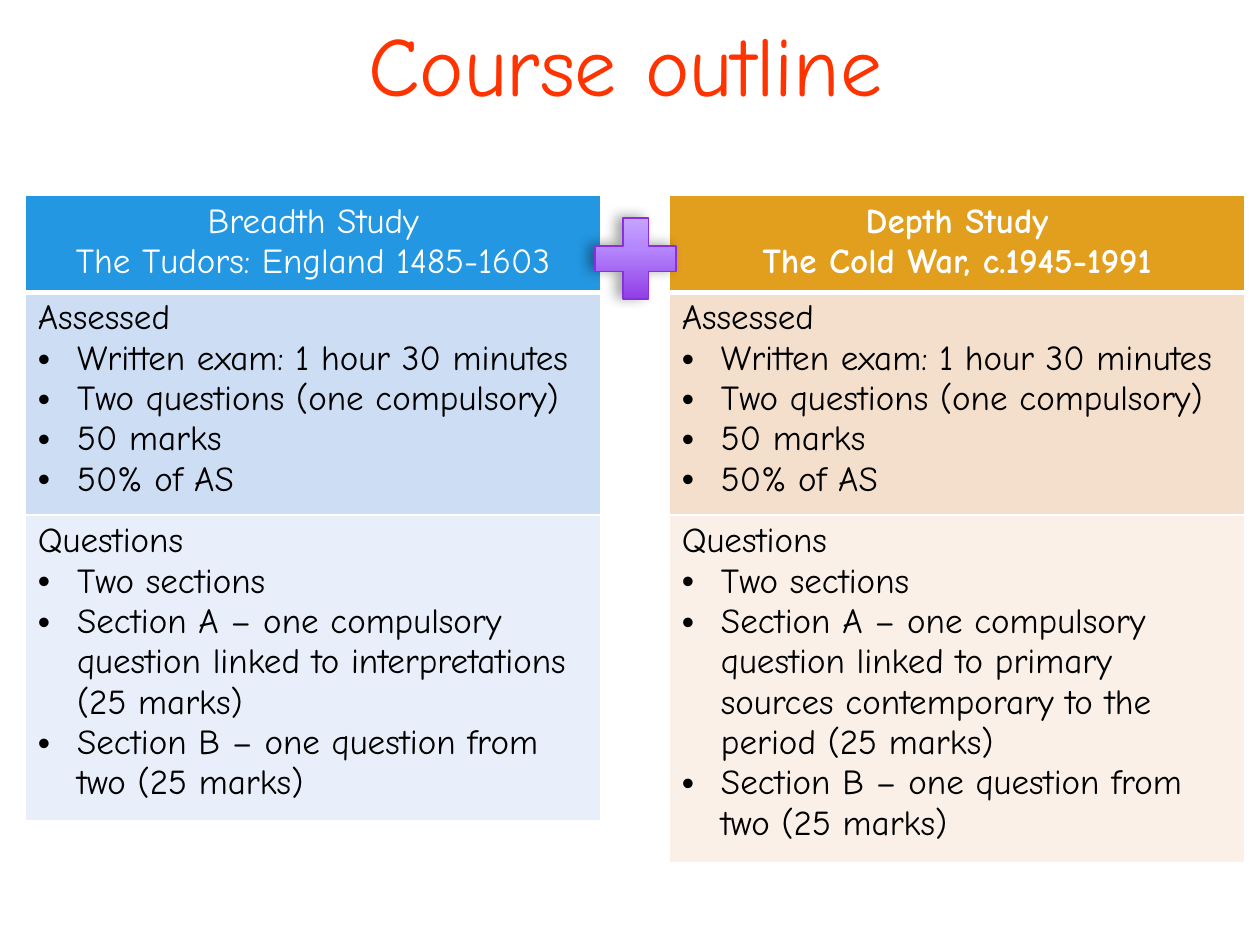
from copy import deepcopy
from dataclasses import dataclass

from lxml.etree import SubElement
from pptx import Presentation
from pptx.dml.color import RGBColor
from pptx.enum.shapes import MSO_SHAPE as Shape
from pptx.enum.text import MSO_ANCHOR as Anchor, MSO_AUTO_SIZE as AutoSize, PP_ALIGN as Align
from pptx.oxml.ns import qn
from pptx.util import Cm, Pt

FONT = "Comic Neue"
WHITE = RGBColor(0xFF, 0xFF, 0xFF)
BLACK = RGBColor(0x00, 0x00, 0x00)
TITLE_RED = RGBColor(0xFF, 0x33, 0x00)
BLUES = (RGBColor(0x23, 0x97, 0xE2), RGBColor(0xCD, 0xDD, 0xF4), RGBColor(0xE8, 0xEF, 0xFA))
OCHRES = (RGBColor(0xE2, 0x9F, 0x1D), RGBColor(0xF4, 0xDF, 0xCD), RGBColor(0xFA, 0xF0, 0xE8))
PLUS_STOPS = (
    (0, RGBColor(0xCD, 0xB2, 0xFD)),
    (0.4, RGBColor(0xB5, 0x87, 0xFE)),
    (1, RGBColor(0x87, 0x29, 0xDE)),
)
PLUS_LINE = RGBColor(0x8A, 0x2F, 0xDF)

ASSESSED = (
    "Assessed",
    "Written exam: 1 hour 30 minutes",
    "Two questions (one compulsory)",
    "50 marks",
    "50% of AS",
)


@dataclass
class Box:
    left: float
    top: float
    width: float
    height: float

    def lengths(self):
        return Cm(self.left), Cm(self.top), Cm(self.width), Cm(self.height)


def questions(task):
    return (
        "Questions",
        "Two sections",
        f"Section A – one compulsory question linked to {task} (25 marks)",
        "Section B – one question from two (25 marks)",
    )


def add_run(para, text, size, color, bold=False):
    span = para.add_run()
    span.text = text
    span.font.name = FONT
    span.font.size = Pt(size)
    span.font.bold = bold
    span.font.color.rgb = color


def add_title(page, box, text):
    title = page.shapes.title
    title.left, title.top, title.width, title.height = box.lengths()
    title.fill.solid()
    title.fill.fore_color.rgb = WHITE
    color = title.fill._xPr.find(f".//{qn('a:srgbClr')}")
    SubElement(color, qn("a:alpha"), val="29000")
    frame = title.text_frame
    frame.auto_size = AutoSize.NONE
    frame.vertical_anchor = Anchor.TOP
    para = frame.paragraphs[0]
    para.alignment = Align.CENTER
    add_run(para, text, 48, TITLE_RED)


def set_borders(cell, **widths):
    props = cell._tc.get_or_add_tcPr()
    for side in ("L", "R", "T", "B"):
        line = SubElement(props, qn(f"a:ln{side}"), w=str(Pt(widths.get(side, 1))))
        SubElement(SubElement(line, qn("a:solidFill")), qn("a:srgbClr"), val=str(WHITE))


def set_bullet(para):
    props = para._p.get_or_add_pPr()
    props.set("marL", str(Cm(0.79)))
    props.set("indent", str(-Cm(0.79)))
    SubElement(props, qn("a:buFont"), typeface="Arial")
    SubElement(props, qn("a:buChar"), char="•")


def fill_cell(cell, lines, color, header, bold):
    cell.fill.solid()
    cell.fill.fore_color.rgb = color
    frame = cell.text_frame
    for number, line in enumerate(lines):
        para = frame.add_paragraph() if number else frame.paragraphs[0]
        if header:
            para.alignment = Align.CENTER
        elif number:
            set_bullet(para)
        add_run(para, line, 20, WHITE if header else BLACK, header and bold)


def add_study(page, box, sections, colors, bold=False):
    table = page.shapes.add_table(len(sections), 1, *box.lengths()).table
    table.horz_banding = False
    table.columns[0].width = Cm(box.width)
    header_height, assessed_height = 1.95, 4.49
    heights = (header_height, assessed_height, box.height - header_height - assessed_height)
    for index, (lines, color, height) in enumerate(zip(sections, colors, heights)):
        table.rows[index].height = Cm(height)
        cell = table.cell(index, 0)
        set_borders(cell, T=3 if index == 1 else 1, B=3 if index == 0 else 1)
        fill_cell(cell, lines, color, index == 0, bold)


def add_plus(page, box):
    plus = page.shapes.add_shape(Shape.MATH_PLUS, *box.lengths())
    plus.fill.gradient()
    plus.fill.gradient_angle = 270
    stop_list = plus._element.spPr.find(f".//{qn('a:gsLst')}")
    stop_list.append(deepcopy(stop_list[0]))
    for stop, (position, color) in zip(plus.fill.gradient_stops, PLUS_STOPS):
        stop.position = position
        stop.color.rgb = color
    plus.line.color.rgb = PLUS_LINE
    plus.line.width = Pt(1)
    plus.shadow.inherit = False
    effects = plus._element.spPr.find(qn("a:effectLst"))
    shadow = SubElement(effects, qn("a:outerShdw"), blurRad=str(Pt(7)), dist=str(Pt(4)),
                        dir=str(190 * 60000), rotWithShape="0")
    color = SubElement(shadow, qn("a:srgbClr"), val=str(BLACK))
    SubElement(color, qn("a:alpha"), val="35000")


def main():
    deck = Presentation()
    deck.slide_width, deck.slide_height = Cm(25.4), Cm(19.05)
    page = deck.slides.add_slide(deck.slide_layouts[5])
    add_title(page, Box(0.3, 0.13, 24.61, 2.31), "Course outline")
    breadth = (
        ("Breadth Study", "The Tudors: England 1485-1603"),
        ASSESSED,
        questions("interpretations"),
    )
    depth = (
        ("Depth Study", "The Cold War, c.1945-1991"),
        ASSESSED,
        questions("primary sources contemporary to the period"),
    )
    add_study(page, Box(0.51, 3.94, 11.61, 12.6), breadth, BLUES)
    add_study(page, Box(13.49, 3.94, 11.61, 13.45), depth, OCHRES, bold=True)
    add_plus(page, Box(11.71, 4.11, 2.21, 2.21))
    deck.save("out.pptx")


if __name__ == "__main__":
    main()
